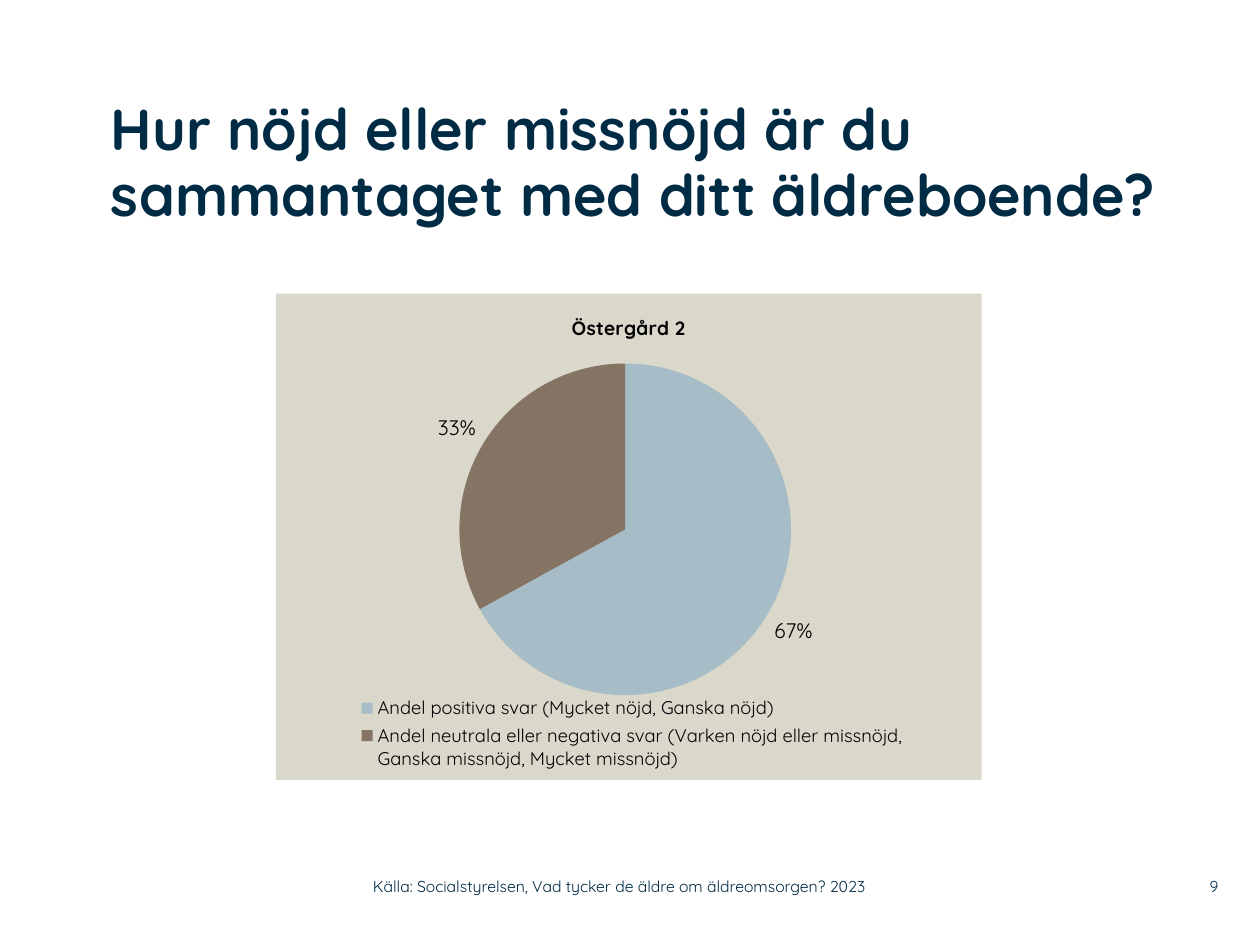
import pptx
import pptx.chart.data
import pptx.dml.color
import pptx.enum.chart
import pptx.enum.text
import pptx.oxml
import pptx.oxml.ns
import pptx.util
from pptx.util import Inches

FONT = "Quicksand"
NAVY = pptx.dml.color.RGBColor(0x00, 0x2B, 0x45)
BLACK = pptx.dml.color.RGBColor(0x00, 0x00, 0x00)
SAND = pptx.dml.color.RGBColor(0xDA, 0xD7, 0xCB)
BLUE = pptx.dml.color.RGBColor(0xA6, 0xBC, 0xC6)
BROWN = pptx.dml.color.RGBColor(0x85, 0x73, 0x63)

ANSWERS = [
    ("Andel positiva svar (Mycket nöjd, Ganska nöjd)", 67, BLUE),
    ("Andel neutrala eller negativa svar (Varken nöjd eller missnöjd, "
     "Ganska missnöjd, Mycket missnöjd)", 33, BROWN),
]


def format_font(font, size, color, bold=False):
    font.name = FONT
    font.size = pptx.util.Pt(size)
    font.color.rgb = color
    font.bold = bold


def add_text(slide, text, left, top, width, height, size=9, bold=False,
             align=pptx.enum.text.PP_ALIGN.LEFT,
             anchor=pptx.enum.text.MSO_ANCHOR.MIDDLE, line_spacing=1.0):
    box = slide.shapes.add_textbox(Inches(left), Inches(top), Inches(width), Inches(height))
    frame = box.text_frame
    frame.word_wrap = True
    frame.margin_left = frame.margin_right = frame.margin_top = frame.margin_bottom = 0
    frame.vertical_anchor = anchor
    paragraph = frame.paragraphs[0]
    paragraph.alignment = align
    paragraph.line_spacing = line_spacing
    run = paragraph.add_run()
    run.text = text
    format_font(run.font, size, NAVY, bold)


def layout_xml(left, top, width, height, inner=False):
    target = '<c:layoutTarget val="inner"/>' if inner else ""
    return pptx.oxml.parse_xml(
        f'<c:layout {pptx.oxml.ns.nsdecls("c")}><c:manualLayout>{target}'
        '<c:xMode val="edge"/><c:yMode val="edge"/>'
        f'<c:x val="{left}"/><c:y val="{top}"/><c:w val="{width}"/><c:h val="{height}"/>'
        '</c:manualLayout></c:layout>')


def place_plot(chart, *area):
    plot_area = chart.plots[0]._element.getparent()
    for layout in plot_area.findall(pptx.oxml.ns.qn("c:layout")):
        plot_area.remove(layout)
    plot_area.insert(0, layout_xml(*area, inner=True))


def place_legend(legend, *area):
    element = legend._element
    for layout in element.findall(pptx.oxml.ns.qn("c:layout")):
        element.remove(layout)
    element.find(pptx.oxml.ns.qn("c:legendPos")).addnext(layout_xml(*area))


def fill_chart_background(chart, color):
    chart_space = chart._chartSpace
    properties = pptx.oxml.parse_xml(
        f'<c:spPr {pptx.oxml.ns.nsdecls("c", "a")}><a:solidFill><a:srgbClr val="{color}"/>'
        '</a:solidFill><a:ln><a:noFill/></a:ln></c:spPr>')
    chart_space.find(pptx.oxml.ns.qn("c:chart")).addnext(properties)


def add_answer_pie(slide, title, left, top, width, height):
    data = pptx.chart.data.CategoryChartData()
    data.categories = [label for label, _, _ in ANSWERS]
    data.add_series(title, [value for _, value, _ in ANSWERS])
    chart = slide.shapes.add_chart(
        pptx.enum.chart.XL_CHART_TYPE.PIE, Inches(left), Inches(top),
        Inches(width), Inches(height), data).chart
    format_font(chart.font, 18, BLACK)
    fill_chart_background(chart, SAND)

    chart.has_title = True
    chart.chart_title.include_in_layout = False
    title_run = chart.chart_title.text_frame.paragraphs[0].add_run()
    title_run.text = title
    format_font(title_run.font, 11, BLACK, bold=True)

    chart.has_legend = True
    chart.legend.position = pptx.enum.chart.XL_LEGEND_POSITION.BOTTOM
    chart.legend.include_in_layout = False
    format_font(chart.legend.font, 10.5, BLACK)
    place_legend(chart.legend, 0.11, 0.82, 0.79, 0.17)
    place_plot(chart, 0.26, 0.14, 0.47, 0.69)

    plot = chart.plots[0]
    plot.vary_by_categories = True
    for index, (_, _, color) in enumerate(ANSWERS):
        point_format = plot.series[0].points[index].format
        point_format.fill.solid()
        point_format.fill.fore_color.rgb = color
        point_format.line.fill.background()

    plot.has_data_labels = True
    labels = plot.data_labels
    labels.show_percentage = True
    labels.show_value = False
    labels.number_format = "0%"
    labels.number_format_is_linked = False
    labels.position = pptx.enum.chart.XL_LABEL_POSITION.OUTSIDE_END
    format_font(labels.font, 12, BLACK)


def main():
    presentation = pptx.Presentation()
    presentation.slide_width = Inches(10)
    presentation.slide_height = Inches(7.5)
    slide = presentation.slides.add_slide(presentation.slide_layouts[6])
    add_text(slide, "Hur nöjd eller missnöjd är du sammantaget med ditt äldreboende?",
             0.88, 0.78, 8.83, 1.42, size=33, bold=True,
             anchor=pptx.enum.text.MSO_ANCHOR.TOP, line_spacing=0.95)
    add_answer_pie(slide, "Östergård 2", 2.19, 2.33, 5.6, 3.86)
    add_text(slide, "Källa: Socialstyrelsen, Vad tycker de äldre om äldreomsorgen? 2023",
             2.96, 6.89, 4.43, 0.29)
    add_text(slide, "9", 9.2, 6.89, 0.47, 0.29, align=pptx.enum.text.PP_ALIGN.RIGHT)
    presentation.save("out.pptx")


if __name__ == "__main__":
    main()
